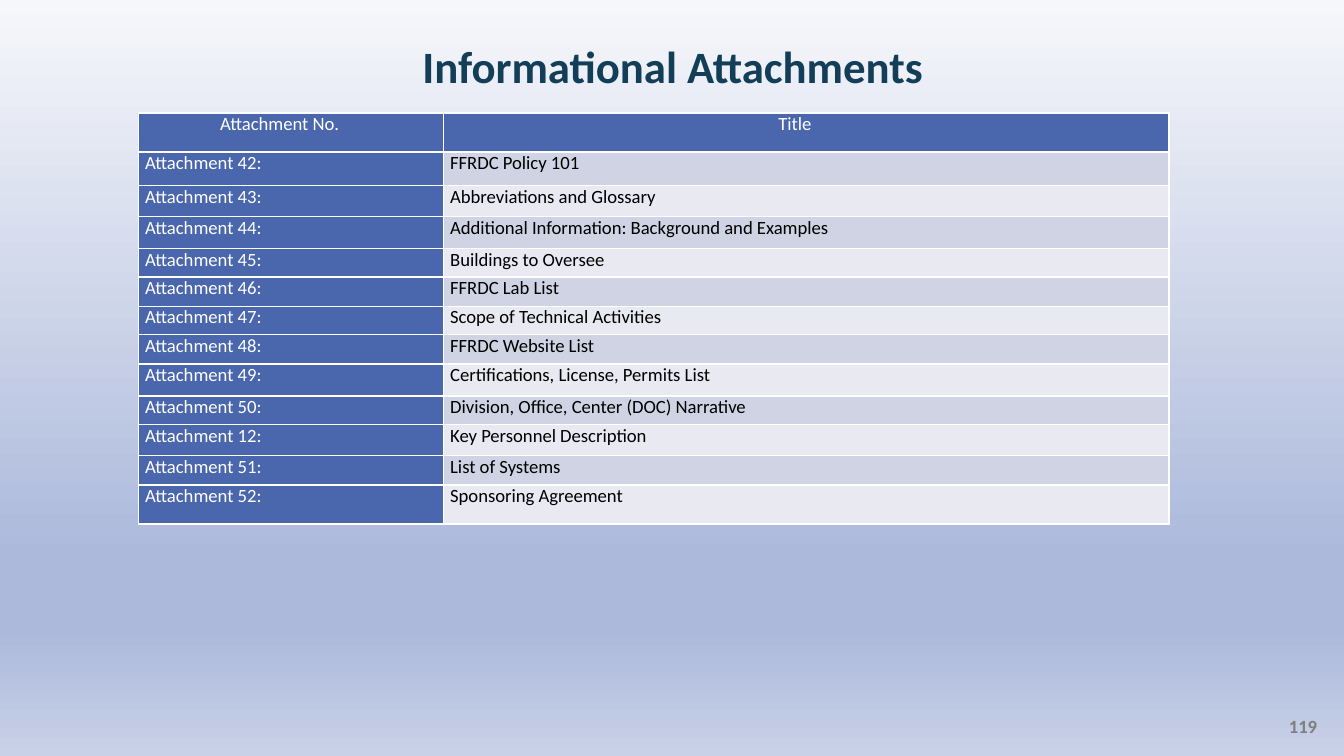
from dataclasses import dataclass

from lxml.etree import SubElement as Sub
from pptx import Presentation
from pptx.dml.color import RGBColor as RGB
from pptx.enum.text import MSO_ANCHOR as Anchor, PP_ALIGN as Align
from pptx.oxml.ns import qn
from pptx.util import Inches, Pt


@dataclass(frozen=True)
class Theme:
    """Colours and type sizes of the slide."""
    font: str = "Calibri"
    navy: str = "123E57"
    blue: str = "4A66AC"
    white: str = "FFFFFF"
    black: str = "000000"
    gray: str = "7F7F7F"
    bands: tuple = ("D0D3E3", "E9EAF1")
    stops: tuple = ((0, "F6F7FB"), (74, "ACB9DB"), (83, "ACB9DB"), (100, "C8D1E7"))
    head: int = 24
    body: int = 10


THEME = Theme()
HEADS = ("Attachment No.", "Title")
ITEMS = (
    (42, "FFRDC Policy 101"),
    (43, "Abbreviations and Glossary"),
    (44, "Additional Information: Background and Examples"),
    (45, "Buildings to Oversee"),
    (46, "FFRDC Lab List"),
    (47, "Scope of Technical Activities"),
    (48, "FFRDC Website List"),
    (49, "Certifications, License, Permits List"),
    (50, "Division, Office, Center (DOC) Narrative"),
    (12, "Key Personnel Description"),
    (51, "List of Systems"),
    (52, "Sponsoring Agreement"),
)
WIDTHS = (2.27, 5.4)
HEIGHTS = (0.29, 0.25, 0.23, 0.24, 0.21, 0.22, 0.21, 0.22, 0.24, 0.21, 0.23, 0.22, 0.29)


def set_text(frame, text, size, color, align=Align.LEFT, bold=False):
    """Fill a text frame with one styled paragraph."""
    frame.text = text
    para = frame.paragraphs[0]
    para.alignment = align
    font = para.runs[0].font
    font.name, font.size, font.bold = THEME.font, Pt(size), bold
    font.color.rgb = RGB.from_string(color)


def clear_insets(frame):
    """Remove the inner margins of a text frame."""
    frame.margin_left = frame.margin_right = 0
    frame.margin_top = frame.margin_bottom = 0
    frame.word_wrap = True


def paint_back(slide):
    """Paint the vertical gradient behind the slide."""
    fill = slide.background.fill
    fill.gradient()
    fill.gradient_angle = 270
    stops = next(slide.element.iter(qn("a:gsLst")))
    for stop in list(stops):
        stops.remove(stop)
    for place, color in THEME.stops:
        stop = Sub(stops, qn("a:gs"), pos=str(place * 1000))
        Sub(stop, qn("a:srgbClr"), val=color)


def add_title(slide, text):
    """Place and style the title."""
    title = slide.shapes.title
    title.left, title.top = Inches(0.54), Inches(0.34)
    title.width, title.height = Inches(8.93), Inches(0.35)
    frame = title.text_frame
    clear_insets(frame)
    frame.vertical_anchor = Anchor.BOTTOM
    set_text(frame, text, THEME.head, THEME.navy, Align.CENTER, True)
    frame.paragraphs[0].line_spacing = 0.9


def add_number(slide, text):
    """Add the page number in the lower right corner."""
    box = slide.shapes.add_textbox(Inches(9.46), Inches(5.32), Inches(0.34), Inches(0.2))
    clear_insets(box.text_frame)
    set_text(box.text_frame, text, THEME.body, THEME.gray, Align.RIGHT, True)


def draw_edges(cell):
    """Draw thin white borders round a cell."""
    props = cell._tc.get_or_add_tcPr()
    for side in ("L", "R", "T", "B"):
        line = Sub(props, qn(f"a:ln{side}"), w=str(Pt(1)))
        fill = Sub(line, qn("a:solidFill"))
        Sub(fill, qn("a:srgbClr"), val=THEME.white)


def style_cell(cell, text, fill, color, head):
    """Write and format one table cell."""
    draw_edges(cell)
    cell.fill.solid()
    cell.fill.fore_color.rgb = RGB.from_string(fill)
    cell.margin_left = Inches(0.05)
    cell.margin_right = Inches(0.22 if head else 0.05)
    cell.margin_top = cell.margin_bottom = 0
    align = Align.CENTER if head else Align.LEFT
    set_text(cell.text_frame, text, THEME.body, color, align)


def add_list(slide):
    """Add the table of attachments."""
    rows = [HEADS] + [(f"Attachment {num}:", name) for num, name in ITEMS]
    frame = slide.shapes.add_table(
        len(rows), len(WIDTHS), Inches(1.03), Inches(0.84),
        Inches(sum(WIDTHS)), Inches(sum(HEIGHTS)))
    table = frame.table
    for col, width in zip(table.columns, WIDTHS):
        col.width = Inches(width)
    for r, (row, height) in enumerate(zip(rows, HEIGHTS)):
        table.rows[r].height = Inches(height)
        for c, text in enumerate(row):
            dark = r == 0 or c == 0
            fill = THEME.blue if dark else THEME.bands[(r - 1) % 2]
            color = THEME.white if dark else THEME.black
            style_cell(table.cell(r, c), text, fill, color, r == 0)


def main():
    """Build and save the slide."""
    deck = Presentation()
    deck.slide_width = Inches(10)
    deck.slide_height = deck.slide_width * 9 // 16
    slide = deck.slides.add_slide(deck.slide_layouts[5])
    paint_back(slide)
    add_number(slide, "119")
    add_title(slide, "Informational Attachments")
    add_list(slide)
    deck.save("out.pptx")


if __name__ == "__main__":
    main()
